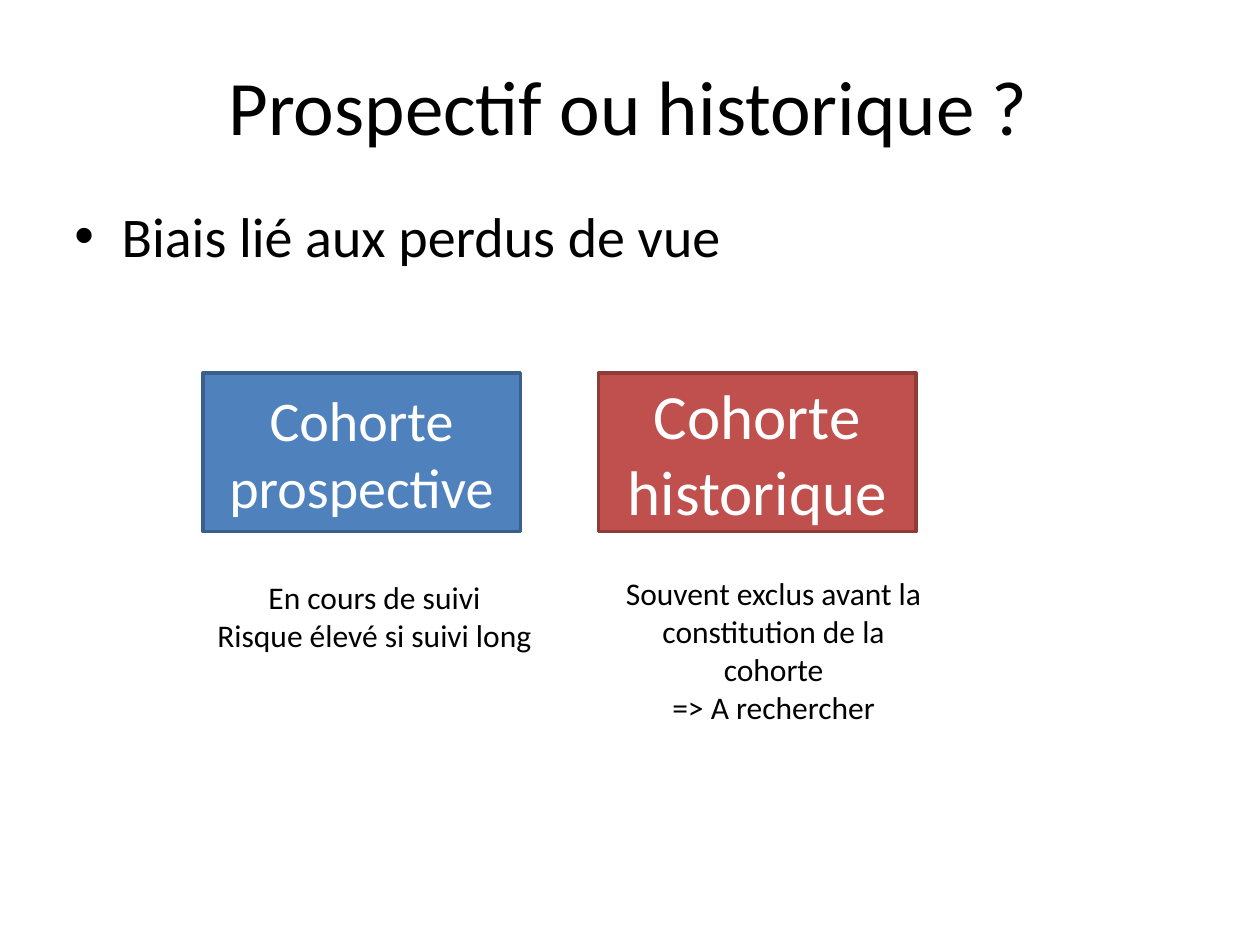
import dataclasses

import pptx
import pptx.dml.color
import pptx.enum.shapes
import pptx.enum.text
import pptx.slide
import pptx.text.text
import pptx.util

Inches = pptx.util.Inches
RGBColor = pptx.dml.color.RGBColor
CENTER = pptx.enum.text.PP_ALIGN.CENTER
MIDDLE = pptx.enum.text.MSO_ANCHOR.MIDDLE

BLACK = RGBColor(0x00, 0x00, 0x00)
WHITE = RGBColor(0xFF, 0xFF, 0xFF)
BLUE = RGBColor(0x4F, 0x81, 0xBD)
DARK_BLUE = RGBColor(0x3A, 0x5F, 0x8C)
RED = RGBColor(0xC0, 0x50, 0x4D)
DARK_RED = RGBColor(0x8E, 0x3B, 0x39)

FONT = "Calibri"
MARGIN, CONTENT_WIDTH = 0.49, 9
COHORT_TOP, COHORT_WIDTH, COHORT_HEIGHT = 2.96, 2.52, 1.26


@dataclasses.dataclass(frozen=True)
class Cohort:
    label: str
    left: float
    size: int
    fill: RGBColor
    outline: RGBColor


@dataclasses.dataclass(frozen=True)
class Remark:
    lines: tuple[str, ...]
    left: float
    top: float
    width: float
    height: float
    wrap: bool


COHORTS = (
    Cohort("Cohorte prospective", 1.61, 32, BLUE, DARK_BLUE),
    Cohort("Cohorte historique", 4.75, 36, RED, DARK_RED),
)
REMARKS = (
    Remark(("En cours de suivi ", "Risque élevé si suivi long "),
           1.61, 4.54, 2.78, 0.71, False),
    Remark(("Souvent exclus avant la constitution de la cohorte", "=> A rechercher"),
           4.84, 4.51, 2.6, 1.31, True),
)


def add_run(paragraph: pptx.text.text._Paragraph, text: str, size: int,
            color: RGBColor = BLACK) -> None:
    run = paragraph.add_run()
    run.text = text
    run.font.name = FONT
    run.font.size = pptx.util.Pt(size)
    run.font.color.rgb = color


def fill_placeholder(slide: pptx.slide.Slide, index: int, text: str,
                     top: float, height: float, size: int) -> None:
    holder = slide.placeholders[index]
    holder.left, holder.top = Inches(MARGIN), Inches(top)
    holder.width, holder.height = Inches(CONTENT_WIDTH), Inches(height)
    add_run(holder.text_frame.paragraphs[0], text, size)


def add_cohort(slide: pptx.slide.Slide, cohort: Cohort) -> None:
    box = slide.shapes.add_shape(
        pptx.enum.shapes.MSO_SHAPE.RECTANGLE, Inches(cohort.left), Inches(COHORT_TOP),
        Inches(COHORT_WIDTH), Inches(COHORT_HEIGHT))
    box.shadow.inherit = False
    box.fill.solid()
    box.fill.fore_color.rgb = cohort.fill
    box.line.color.rgb = cohort.outline
    box.line.width = pptx.util.Pt(2)
    box.text_frame.word_wrap = True
    box.text_frame.vertical_anchor = MIDDLE
    label = box.text_frame.paragraphs[0]
    label.alignment = CENTER
    add_run(label, cohort.label, cohort.size, WHITE)


def add_remark(slide: pptx.slide.Slide, remark: Remark) -> None:
    frame = slide.shapes.add_textbox(
        Inches(remark.left), Inches(remark.top),
        Inches(remark.width), Inches(remark.height)).text_frame
    frame.word_wrap = remark.wrap
    frame.auto_size = pptx.enum.text.MSO_AUTO_SIZE.SHAPE_TO_FIT_TEXT
    for number, line in enumerate(remark.lines):
        paragraph = frame.add_paragraph() if number else frame.paragraphs[0]
        paragraph.alignment = CENTER
        add_run(paragraph, line, 18)


def main() -> None:
    deck = pptx.Presentation()
    deck.slide_width, deck.slide_height = Inches(10), Inches(7.5)
    slide = deck.slides.add_slide(deck.slide_layouts[1])

    # Title and bullet
    fill_placeholder(slide, 0, "Prospectif ou historique ?", 0.21, 1.25, 44)
    fill_placeholder(slide, 1, "Biais lié aux perdus de vue", 1.55, 4.95, 32)

    # The two cohort types, then the remark under each
    for cohort in COHORTS:
        add_cohort(slide, cohort)
    for remark in REMARKS:
        add_remark(slide, remark)

    deck.save("out.pptx")


if __name__ == "__main__":
    main()
